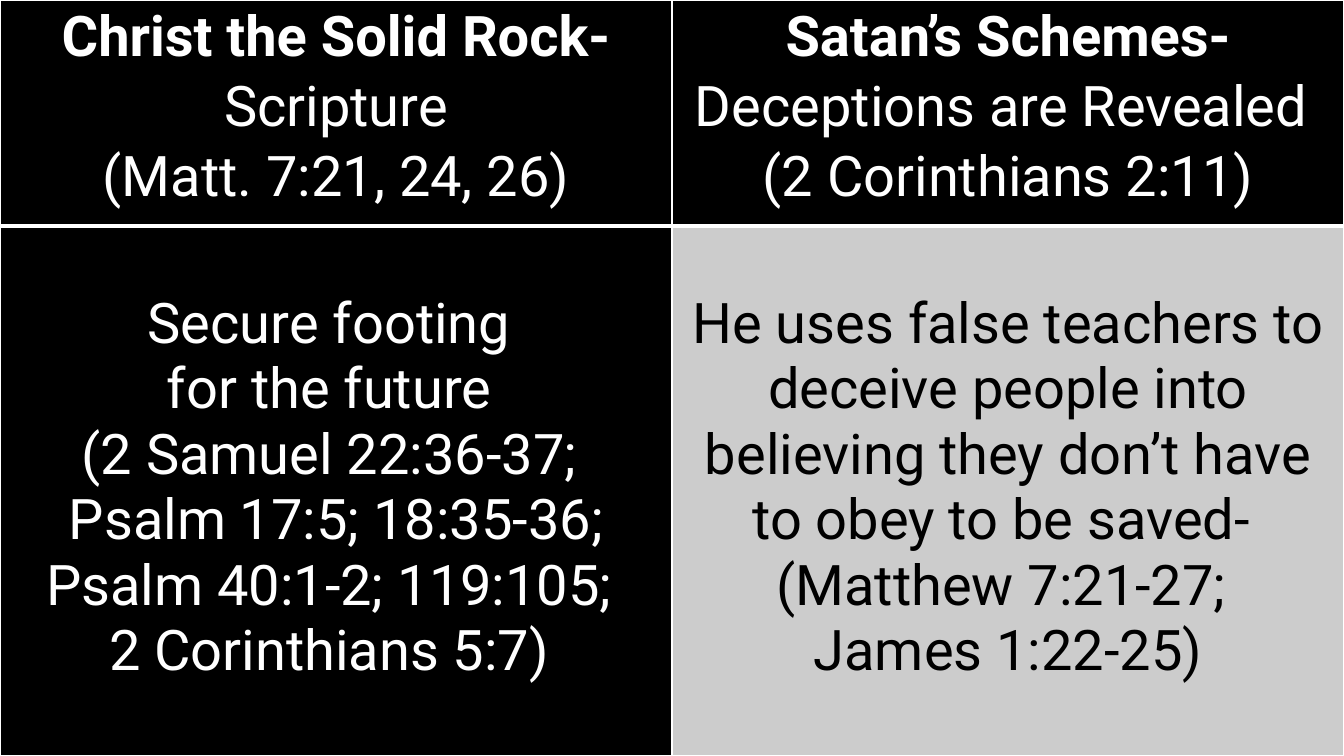
from dataclasses import dataclass

from lxml.etree import SubElement
from pptx import Presentation
from pptx.dml.color import RGBColor
from pptx.enum.text import PP_ALIGN
from pptx.oxml.ns import qn
from pptx.table import _Cell
from pptx.util import Inches, Pt

COLORS = {"black": "000000", "white": "FFFFFF", "gray": "CCCCCC"}
FONT = "Roboto"
TEXT_SIZE = Pt(40)


@dataclass(frozen=True)
class Run:
    text: str
    bold: bool = False


@dataclass(frozen=True)
class Panel:
    paragraphs: list[list[Run]]
    fill: str = "black"
    ink: str = "white"
    top_gap: float = 0
    line_spacing: float = 1.0
    bottom_border: float = 1


def heading(topic: str, subject: str, reference: str) -> Panel:
    return Panel(
        [[Run(topic, bold=True), Run(subject)], [Run(reference)]],
        line_spacing=1.07,
        bottom_border=3,
    )


def body(lines: list[str], fill: str, ink: str) -> Panel:
    return Panel([[Run(line)] for line in lines], fill, ink, top_gap=0.65)


PANELS = [
    [
        heading("Christ the Solid Rock- ", "Scripture", "(Matt. 7:21, 24, 26)"),
        heading("Satan’s Schemes- ", "Deceptions are Revealed ", "(2 Corinthians 2:11)"),
    ],
    [
        body(
            [
                "Secure footing ",
                "for the future ",
                "(2 Samuel 22:36-37; ",
                "Psalm 17:5; 18:35-36; Psalm 40:1-2; 119:105; ",
                "2 Corinthians 5:7) ",
            ],
            "black",
            "white",
        ),
        body(
            [
                "He uses false teachers to deceive people into believing "
                "they don’t have to obey to be saved- ",
                "(Matthew 7:21-27; ",
                "James 1:22-25)",
            ],
            "gray",
            "black",
        ),
    ],
]


def rgb(name: str) -> RGBColor:
    return RGBColor.from_string(COLORS[name])


def draw_borders(cell: _Cell, bottom_width: float) -> None:
    properties = cell._tc.get_or_add_tcPr()
    widths = {"a:lnL": 1, "a:lnR": 1, "a:lnT": 1, "a:lnB": bottom_width}
    for position, (side, width) in enumerate(widths.items()):
        border = SubElement(properties, qn(side), w=str(Pt(width)))
        color = SubElement(SubElement(border, qn("a:solidFill")), qn("a:srgbClr"))
        color.set("val", COLORS["white"])
        properties.insert(position, border)


def draw_panel(cell: _Cell, panel: Panel) -> None:
    cell.fill.solid()
    cell.fill.fore_color.rgb = rgb(panel.fill)
    cell.margin_left = cell.margin_right = Inches(0.07)
    cell.margin_top = Inches(panel.top_gap)
    cell.margin_bottom = 0
    draw_borders(cell, panel.bottom_border)
    frame = cell.text_frame
    for index, runs in enumerate(panel.paragraphs):
        paragraph = frame.add_paragraph() if index else frame.paragraphs[0]
        paragraph.alignment = PP_ALIGN.CENTER
        paragraph.line_spacing = panel.line_spacing
        for part in runs:
            run = paragraph.add_run()
            run.text = part.text
            run.font.name = FONT
            run.font.size = TEXT_SIZE
            run.font.bold = part.bold
            run.font.color.rgb = rgb(panel.ink)


def main() -> None:
    presentation = Presentation()
    presentation.slide_width = Inches(13.33)
    presentation.slide_height = Inches(7.5)
    slide = presentation.slides.add_slide(presentation.slide_layouts[6])
    slide.background.fill.solid()
    slide.background.fill.fore_color.rgb = rgb("black")

    comparison = slide.shapes.add_table(
        len(PANELS), len(PANELS[0]), 0, 0, Inches(13.33), Inches(7.5)
    ).table
    for row, height in zip(comparison.rows, (2.24, 5.26)):
        row.height = Inches(height)
    for row_index, row_panels in enumerate(PANELS):
        for column_index, panel in enumerate(row_panels):
            draw_panel(comparison.cell(row_index, column_index), panel)

    presentation.save("out.pptx")


if __name__ == "__main__":
    main()
